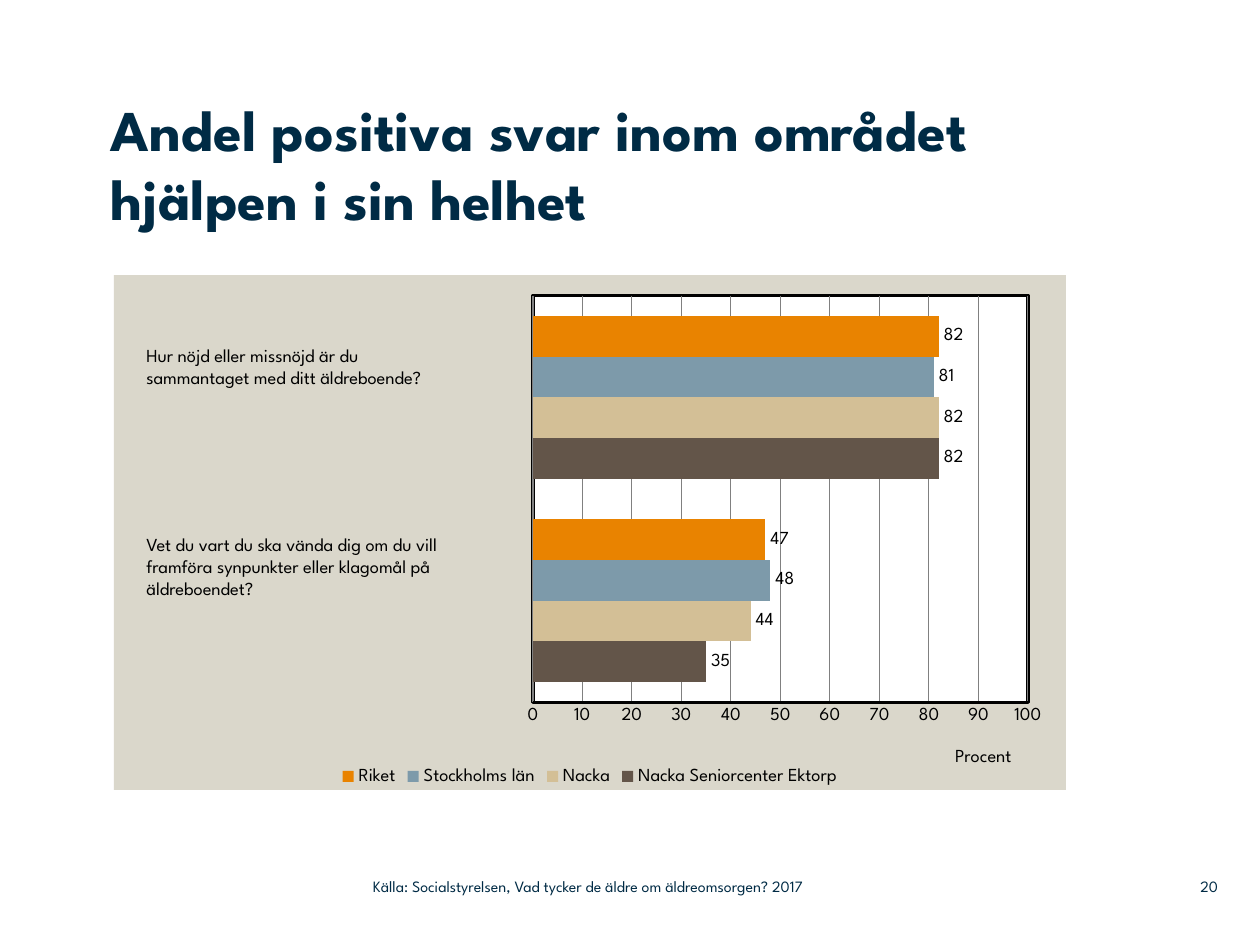
from pptx import Presentation
from pptx.chart.data import CategoryChartData
from pptx.dml.color import RGBColor
from pptx.enum.chart import XL_CHART_TYPE as ChartType, XL_LABEL_POSITION as LabelPosition
from pptx.enum.chart import XL_LEGEND_POSITION as LegendPosition, XL_TICK_MARK as TickMark
from pptx.enum.text import MSO_ANCHOR as Anchor, PP_ALIGN as Align
from pptx.oxml import parse_xml
from pptx.oxml.ns import nsdecls, qn
from pptx.util import Pt

EMU_PER_PX = 914400 / 126
FONT = "League Spartan"
NAVY, BLACK, WHITE, PANEL, GRID = "002B45", "000000", "FFFFFF", "DAD7CB", "808080"

CATEGORIES = ["1", "2"]
SERIES = [
    ("Nacka Seniorcenter Ektorp", (35, 82), "635549"),
    ("Nacka", (44, 82), "D3BF96"),
    ("Stockholms län", (48, 81), "7D9AAA"),
    ("Riket", (47, 82), "E98300"),
]
QUESTIONS = [
    ((134, 338, 375, 57), ["Hur nöjd eller missnöjd är du", "sammantaget med ditt äldreboende?"]),
    ((134, 527, 374, 79),
     ["Vet du vart du ska vända dig om du vill framföra synpunkter eller klagomål på äldreboendet?"]),
]


def px(value):
    return round(value * EMU_PER_PX)


def color(hex_value):
    return RGBColor.from_string(hex_value)


def set_values(target, values):
    for name, value in values.items():
        setattr(target, name, value)


def style_font(font, size, hex_value=BLACK, bold=False):
    set_values(font, {"name": FONT, "size": Pt(size), "bold": bold})
    font.color.rgb = color(hex_value)


def add_text(slide, box, lines, size, hex_value=BLACK, bold=False,
             align=Align.LEFT, frame_format=None):
    frame = slide.shapes.add_textbox(*map(px, box)).text_frame
    set_values(frame, {"word_wrap": True, **(frame_format or {})})
    for index, line in enumerate(lines):
        paragraph = frame.paragraphs[0] if index == 0 else frame.add_paragraph()
        paragraph.alignment = align
        run = paragraph.add_run()
        run.text = line
        style_font(run.font, size, hex_value, bold)


def bare_frame(anchor):
    margins = ("margin_left", "margin_top", "margin_right", "margin_bottom")
    return {**dict.fromkeys(margins, 0), "vertical_anchor": anchor}


def area_format(fill, line=""):
    outline = f'<a:solidFill><a:srgbClr val="{line}"/></a:solidFill>' if line else "<a:noFill/>"
    return parse_xml(
        f'<c:spPr {nsdecls("c", "a")}><a:solidFill><a:srgbClr val="{fill}"/></a:solidFill>'
        f'<a:ln w="{Pt(2)}">{outline}</a:ln></c:spPr>')


def set_layout(parent, position, target="", **places):
    for layout in parent.findall(qn("c:layout")):
        parent.remove(layout)
    inner = f'<c:layoutTarget val="{target}"/>' if target else ""
    modes = "".join(f'<c:{axis}Mode val="edge"/>' for axis in "xy")
    values = "".join(f'<c:{name} val="{value}"/>' for name, value in places.items())
    parent.insert(position, parse_xml(
        f'<c:layout {nsdecls("c")}><c:manualLayout>{inner}{modes}{values}</c:manualLayout></c:layout>'))


def style_axes(chart):
    chart.category_axis.visible = False
    axis = chart.value_axis
    set_values(axis, {
        "minimum_scale": 0, "maximum_scale": 100, "major_unit": 10,
        "major_tick_mark": TickMark.NONE, "minor_tick_mark": TickMark.NONE,
        "has_major_gridlines": True,
    })
    for line, hex_value, width in ((axis.format.line, BLACK, 2),
                                   (axis.major_gridlines.format.line, GRID, 0.75)):
        line.color.rgb = color(hex_value)
        line.width = Pt(width)
    style_font(axis.tick_labels.font, 10.5)
    title = axis.axis_title
    title.text_frame.text = "Procent"
    style_font(title.text_frame.paragraphs[0].runs[0].font, 10.5)
    set_layout(title.element, 1, x=0.88, y=0.91)


def add_bar_chart(slide, box):
    data = CategoryChartData()
    data.categories = CATEGORIES
    for name, values, _ in SERIES:
        data.add_series(name, values)
    chart = slide.shapes.add_chart(ChartType.BAR_CLUSTERED, *map(px, box), data).chart
    set_values(chart, {"has_title": False, "has_legend": True})
    style_font(chart.font, 10.5)
    set_values(chart.legend, {"position": LegendPosition.BOTTOM, "include_in_layout": False})
    style_font(chart.legend.font, 10.5)
    style_axes(chart)

    plot = chart.plots[0]
    set_values(plot, {"gap_width": 100, "overlap": 0, "vary_by_categories": False})
    for series, (_, _, hex_value) in zip(plot.series, SERIES):
        series.format.fill.solid()
        series.format.fill.fore_color.rgb = color(hex_value)
        labels = series.data_labels
        set_values(labels, {"show_value": True, "position": LabelPosition.OUTSIDE_END})
        style_font(labels.font, 10.5)

    chart_element = chart.element.find(qn("c:chart"))
    chart_element.addnext(area_format(PANEL))
    plot_area = chart_element.find(qn("c:plotArea"))
    set_layout(plot_area, 0, "inner", x=0.44, y=0.04, w=0.52, h=0.79)
    plot_area.append(area_format(WHITE, BLACK))


def add_heading(slide, box):
    add_text(slide, box, ["Andel positiva svar inom området hjälpen i sin helhet"],
             33, NAVY, True, frame_format=bare_frame(Anchor.TOP))


def add_results(slide, box):
    add_bar_chart(slide, box)
    for question_box, lines in QUESTIONS:
        add_text(slide, question_box, lines, 10.5)


def add_footer(slide, box):
    left, top, width, height = box
    number_width = 59
    middle = bare_frame(Anchor.MIDDLE)
    add_text(slide, (left, top, 558, height),
             ["Källa: Socialstyrelsen, Vad tycker de äldre om äldreomsorgen? 2017"],
             9, NAVY, frame_format=middle)
    add_text(slide, (left + width - number_width, top, number_width, height),
             ["20"], 9, NAVY, align=Align.RIGHT, frame_format=middle)


def main():
    presentation = Presentation()
    set_values(presentation, {"slide_width": px(1260), "slide_height": px(945)})
    slide = presentation.slides.add_slide(presentation.slide_layouts[6])
    add_heading(slide, (111, 94, 958, 179))
    add_results(slide, (114, 275, 952, 515))
    add_footer(slide, (373, 868, 845, 37))
    presentation.save("out.pptx")


if __name__ == "__main__":
    main()
